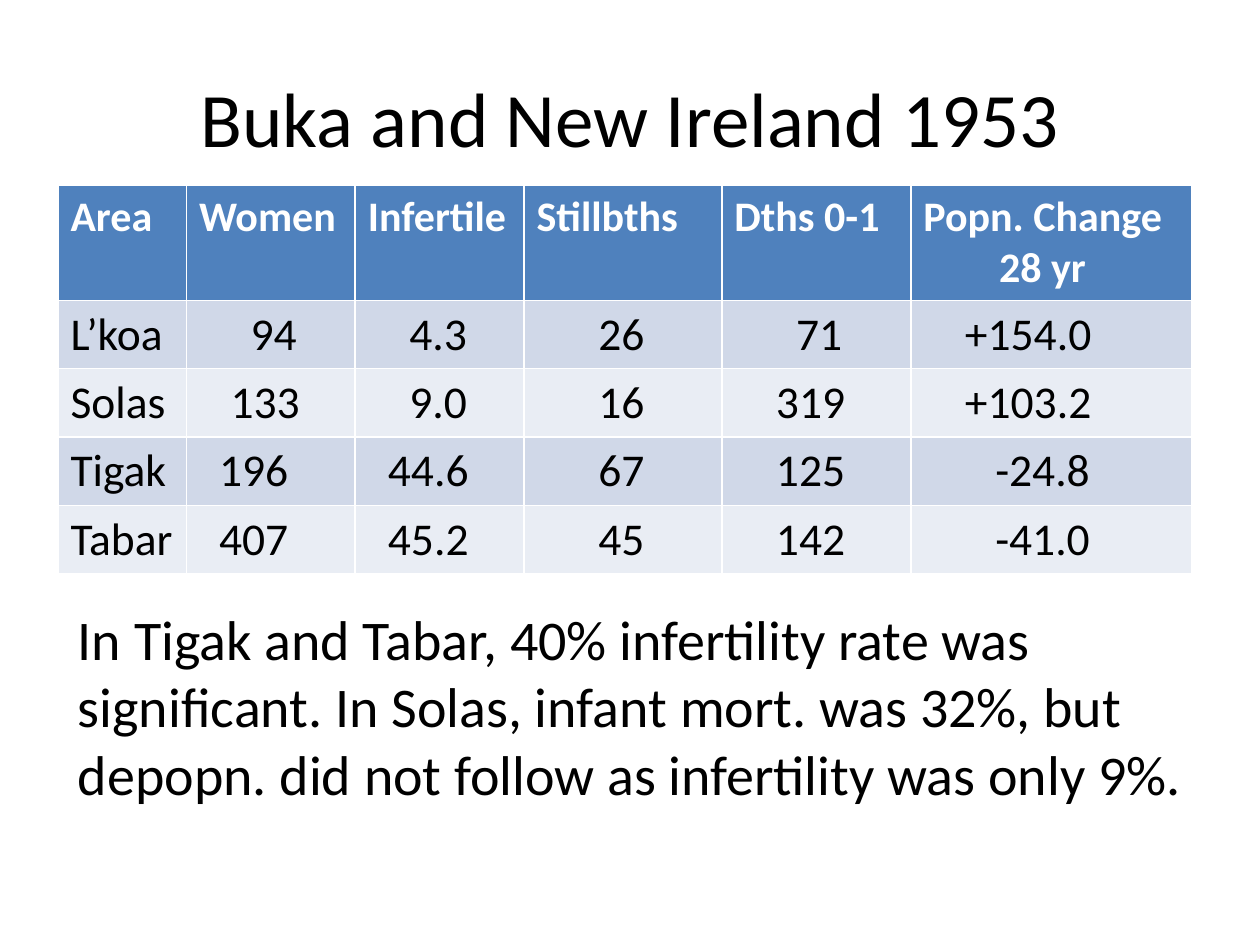
"""Build the Buka and New Ireland 1953 fertility slide."""
from dataclasses import dataclass

from pptx import Presentation
from pptx import util as u
from pptx.dml.color import RGBColor
from pptx.enum import text


@dataclass(frozen=True)
class Theme:
    font: str = "Calibri"
    ink: str = "000000"
    light: str = "FFFFFF"
    header: str = "4F81BD"
    bands: tuple = ("D0D8E8", "E9EDF4")
    title_size: int = 44
    note_size: int = 32
    header_size: int = 24
    cell_size: int = 26


theme = Theme()


def add_span(para, words, size, color, bold=False):
    span = para.add_run()
    span.text = words
    span.font.name = theme.font
    span.font.size = u.Pt(size)
    span.font.bold = bold
    span.font.color.rgb = RGBColor.from_string(color)


def indent(para, inches):
    properties = para._p.get_or_add_pPr()
    properties.set("marL", str(u.Inches(inches)))
    properties.set("indent", "0")


deck = Presentation()
deck.slide_width, deck.slide_height = u.Inches(10), u.Inches(7.5)
page = deck.slides.add_slide(deck.slide_layouts[5])

title = page.shapes.title
title.left, title.top = u.Inches(0.5), u.Inches(0.3)
title.width, title.height = u.Inches(9), u.Inches(1.25)
title.text_frame.vertical_anchor = text.MSO_ANCHOR.MIDDLE
para = title.text_frame.paragraphs[0]
para.alignment = text.PP_ALIGN.CENTER
add_span(para, "Buka and New Ireland 1953", theme.title_size, theme.ink)

headings = ["Area", "Women", "Infertile", "Stillbths", "Dths 0-1", "Popn. Change"]
areas = [
    ["L’koa", "94", "4.3", "26", "71", "+154.0"],
    ["Solas", "133", "9.0", "16", "319", "+103.2"],
    ["Tigak", "196", "44.6", "67", "125", "-24.8"],
    ["Tabar", "407", "45.2", "45", "142", "-41.0"],
]
indents = [
    [0, 0.41, 0.33, 0.49, 0.49, 0.33],
    [0, 0.25, 0.33, 0.49, 0.33, 0.33],
    [0, 0.16, 0.16, 0.49, 0.33, 0.57],
    [0, 0.16, 0.16, 0.49, 0.33, 0.57],
]
column_widths = [1.02, 1.34, 1.34, 1.57, 1.5, 2.23]
row_heights = [0.91] + [0.54] * len(areas)

table = page.shapes.add_table(
    len(row_heights), len(column_widths), u.Inches(0.46), u.Inches(1.47),
    u.Inches(sum(column_widths)), u.Inches(sum(row_heights)),
).table
for column, width in zip(table.columns, column_widths):
    column.width = u.Inches(width)
for row, height in zip(table.rows, row_heights):
    row.height = u.Inches(height)

for column, heading in enumerate(headings):
    cell = table.cell(0, column)
    cell.fill.solid()
    cell.fill.fore_color.rgb = RGBColor.from_string(theme.header)
    add_span(cell.text_frame.paragraphs[0], heading, theme.header_size, theme.light, True)
para = table.cell(0, len(headings) - 1).text_frame.add_paragraph()
indent(para, 0.6)
add_span(para, "28 yr", theme.header_size, theme.light, True)

for row, (values, gaps) in enumerate(zip(areas, indents)):
    for column, (value, gap) in enumerate(zip(values, gaps)):
        cell = table.cell(row + 1, column)
        cell.fill.solid()
        cell.fill.fore_color.rgb = RGBColor.from_string(theme.bands[row % 2])
        para = cell.text_frame.paragraphs[0]
        indent(para, gap)
        add_span(para, value, theme.cell_size, theme.ink)

note = page.shapes.add_textbox(u.Inches(0.52), u.Inches(4.75), u.Inches(9.05), u.Inches(1.72))
note.text_frame.word_wrap = True
note.text_frame.auto_size = text.MSO_AUTO_SIZE.SHAPE_TO_FIT_TEXT
para = note.text_frame.paragraphs[0]
para.space_before = u.Pt(6)
add_span(
    para,
    "In Tigak and Tabar, 40% infertility rate was significant. In Solas, infant mort. "
    "was 32%, but depopn. did not follow as infertility was only 9%.",
    theme.note_size, theme.ink,
)

deck.save("out.pptx")
